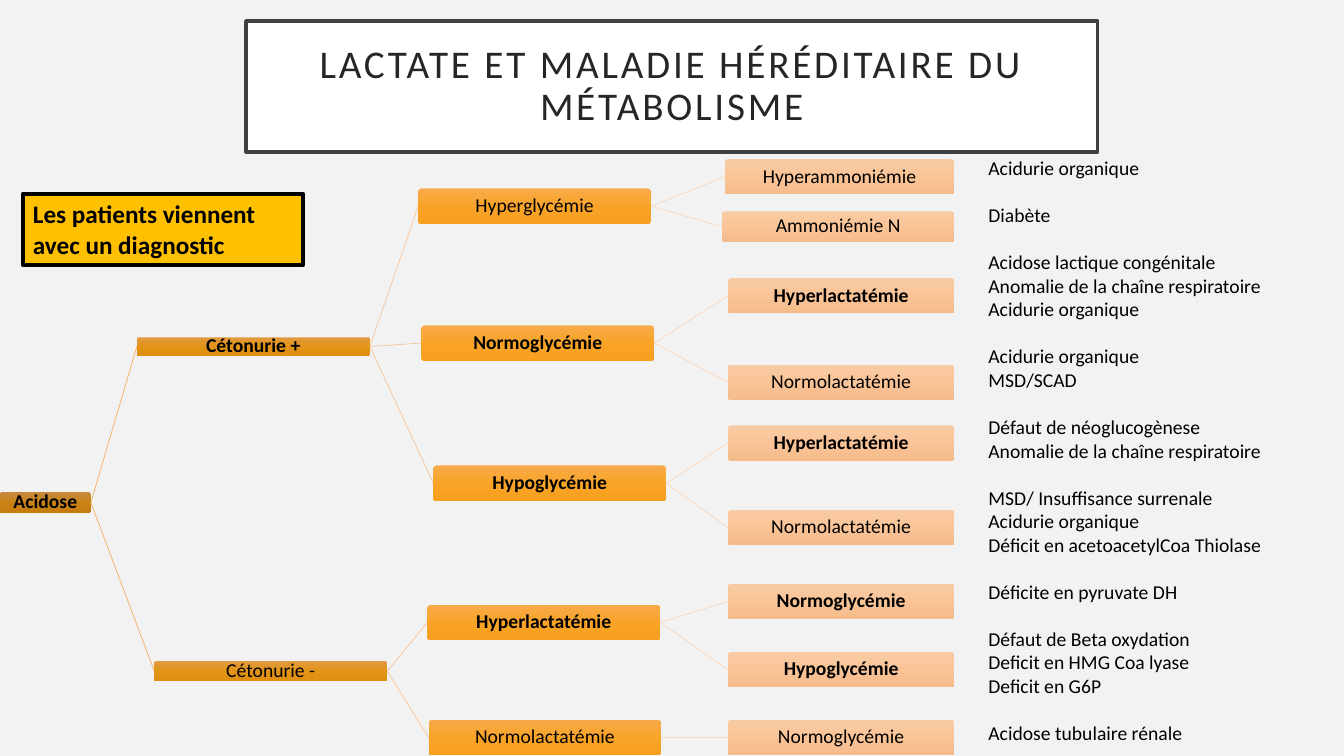
from copy import deepcopy
from pptx import Presentation
from pptx.dml.color import RGBColor
from pptx.enum.shapes import MSO_CONNECTOR as LINE, MSO_SHAPE as SHAPE
from pptx.enum.text import MSO_ANCHOR as ANCHOR, PP_ALIGN as ALIGN
from pptx.oxml.ns import qn
from pptx.util import Cm, Pt

LEVEL_FILLS = [
    ("C88A3F", "C88215", "C57E0E"),
    ("E19A40", "E29417", "E08F10"),
    ("F7AA49", "F9A428", "F89F1D"),
    ("F9CBA4", "FAC497", "F5BB8B"),
]
LINK_COLORS = ["F7AE60", "F9C498", "FBD7BD"]
LEVEL_WIDTHS = [2.29, 5.87, 5.87]
LEAF_RIGHT = 24.06
NODE_HEIGHT = 0.89


def node(text, left, top, *children, bold=True, height=NODE_HEIGHT):
    return dict(text=text, left=left, top=top, children=children, bold=bold, height=height)


TREE = node(
    "Acidose", 0, 12.4,
    node(
        "Cétonurie +", 3.45, 8.5,
        node("Hyperglycémie", 10.54, 4.75,
             node("Hyperammoniémie", 18.26, 4.01, bold=False),
             node("Ammoniémie N", 18.19, 5.33, bold=False, height=0.76),
             bold=False),
        node("Normoglycémie", 10.62, 8.2,
             node("Hyperlactatémie", 18.34, 7.01),
             node("Normolactatémie", 18.34, 9.19, bold=False)),
        node("Hypoglycémie", 10.92, 11.73,
             node("Hyperlactatémie", 18.34, 10.72),
             node("Normolactatémie", 18.34, 12.85, bold=False)),
        height=0.46),
    node(
        "Cétonurie -", 3.89, 16.66,
        node("Hyperlactatémie", 10.77, 15.24,
             node("Normoglycémie", 18.34, 14.71),
             node("Hypoglycémie", 18.34, 16.43)),
        node("Normolactatémie", 10.8, 18.14,
             node("Normoglycémie", 18.34, 18.14, bold=False),
             bold=False),
        bold=False, height=0.51),
    height=0.53)

DIAGNOSES = [
    ["Acidurie organique"],
    ["Diabète"],
    ["Acidose lactique congénitale", "Anomalie de la chaîne respiratoire", "Acidurie organique"],
    ["Acidurie organique", "MSD/SCAD"],
    ["Défaut de néoglucogènese", "Anomalie de la chaîne respiratoire"],
    ["MSD/ Insuffisance surrenale", "Acidurie organique", "Déficit en acetoacetylCoa Thiolase"],
    ["Déficite en pyruvate DH"],
    ["Défaut de Beta oxydation", "Deficit en HMG Coa lyase", "Deficit en G6P"],
    ["Acidose tubulaire rénale"],
]


def rgb(color):
    return RGBColor.from_string(color)


class Deck:
    font = "Calibri"
    text_color = "000000"

    def __init__(self):
        self.prs = Presentation()
        self.prs.slide_width, self.prs.slide_height = Cm(33.87), Cm(19.05)
        self.slide = self.prs.slides.add_slide(self.prs.slide_layouts[6])
        fill = self.slide.background.fill
        fill.solid()
        fill.fore_color.rgb = rgb("F2F2F2")

    def add_text(self, s, groups, size, color=None, bold=False, align=ALIGN.LEFT,
                 anchor=ANCHOR.TOP, spacing=None, inset=None, gap=0):
        tf = s.text_frame
        tf.word_wrap = True
        tf.vertical_anchor = anchor
        if inset is not None:
            tf.margin_left = tf.margin_right = tf.margin_top = tf.margin_bottom = Cm(inset)
        p = None
        for group in groups:
            for i, text in enumerate(group):
                first = p is None
                p = tf.paragraphs[0] if first else tf.add_paragraph()
                p.text = text
                p.alignment = align
                p.line_spacing = spacing
                if i == 0 and gap and not first:
                    p.space_before = Pt(gap)
                p.font.name = self.font
                p.font.size = Pt(size)
                p.font.bold = bold
                p.font.color.rgb = rgb(color or self.text_color)
        return tf

    def shape(self, kind, left, top, width, height):
        s = self.slide.shapes.add_shape(kind, Cm(left), Cm(top), Cm(width), Cm(height))
        s.shadow.inherit = False
        return s

    def panel(self, left, top, width, height, fill, line, weight):
        s = self.shape(SHAPE.RECTANGLE, left, top, width, height)
        s.fill.solid()
        s.fill.fore_color.rgb = rgb(fill)
        s.line.color.rgb = rgb(line)
        s.line.width = Pt(weight)
        return s

    def text_box(self, left, top, width, height):
        return self.slide.shapes.add_textbox(Cm(left), Cm(top), Cm(width), Cm(height))

    def gradient(self, s, colors):
        s.fill.gradient()
        s.fill.gradient_angle = 270
        stops = s._element.spPr.find(".//" + qn("a:gsLst"))
        stops.insert(1, deepcopy(stops[0]))
        for i, (stop, color) in enumerate(zip(s.fill.gradient_stops, colors)):
            stop.position = i / 2
            stop.color.rgb = rgb(color)

    def link(self, start, end, color):
        c = self.slide.shapes.add_connector(LINE.STRAIGHT, *map(Cm, start + end))
        c.line.color.rgb = rgb(color)
        c.line.width = Pt(0.5)
        spPr = c._element.spPr
        spPr.append(spPr.makeelement(qn("a:effectLst"), {}))

    def branch(self, item, level=0):
        left, top, height = item["left"], item["top"], item["height"]
        width = LEVEL_WIDTHS[level] if level < len(LEVEL_WIDTHS) else LEAF_RIGHT - left
        s = self.shape(SHAPE.ROUNDED_RECTANGLE, left, top, width, height)
        s.adjustments[0] = 0.1
        s.line.fill.background()
        self.gradient(s, LEVEL_FILLS[level])
        self.add_text(s, [[item["text"]]], 14, bold=item["bold"], align=ALIGN.CENTER,
                      anchor=ANCHOR.MIDDLE, spacing=0.9, inset=0.03)
        for child in item["children"]:
            self.link((left + width, top + height / 2),
                      (child["left"], child["top"] + child["height"] / 2),
                      LINK_COLORS[level])
            self.branch(child, level + 1)


def main():
    deck = Deck()
    title = deck.panel(6.2, 0.53, 21.46, 3.3, "FFFFFF", "404040", 2.5)
    tf = deck.add_text(title, [["LACTATE ET MALADIE HÉRÉDITAIRE DU MÉTABOLISME"]], 28, "262626",
                       align=ALIGN.CENTER, anchor=ANCHOR.MIDDLE, spacing=0.9, inset=0.51)
    tf.paragraphs[0].runs[0].font._element.set("spc", "200")

    notice = deck.panel(0.58, 4.88, 7.06, 1.8, "FFC000", "000000", 3)
    deck.add_text(notice, [["Les patients viennent", "avec un diagnostic"]], 18, bold=True)

    diagnoses = deck.text_box(24.66, 3.81, 7.52, 15.21)
    deck.add_text(diagnoses, DIAGNOSES, 14, gap=16.8)

    deck.branch(TREE)
    deck.prs.save("out.pptx")


if __name__ == "__main__":
    main()
